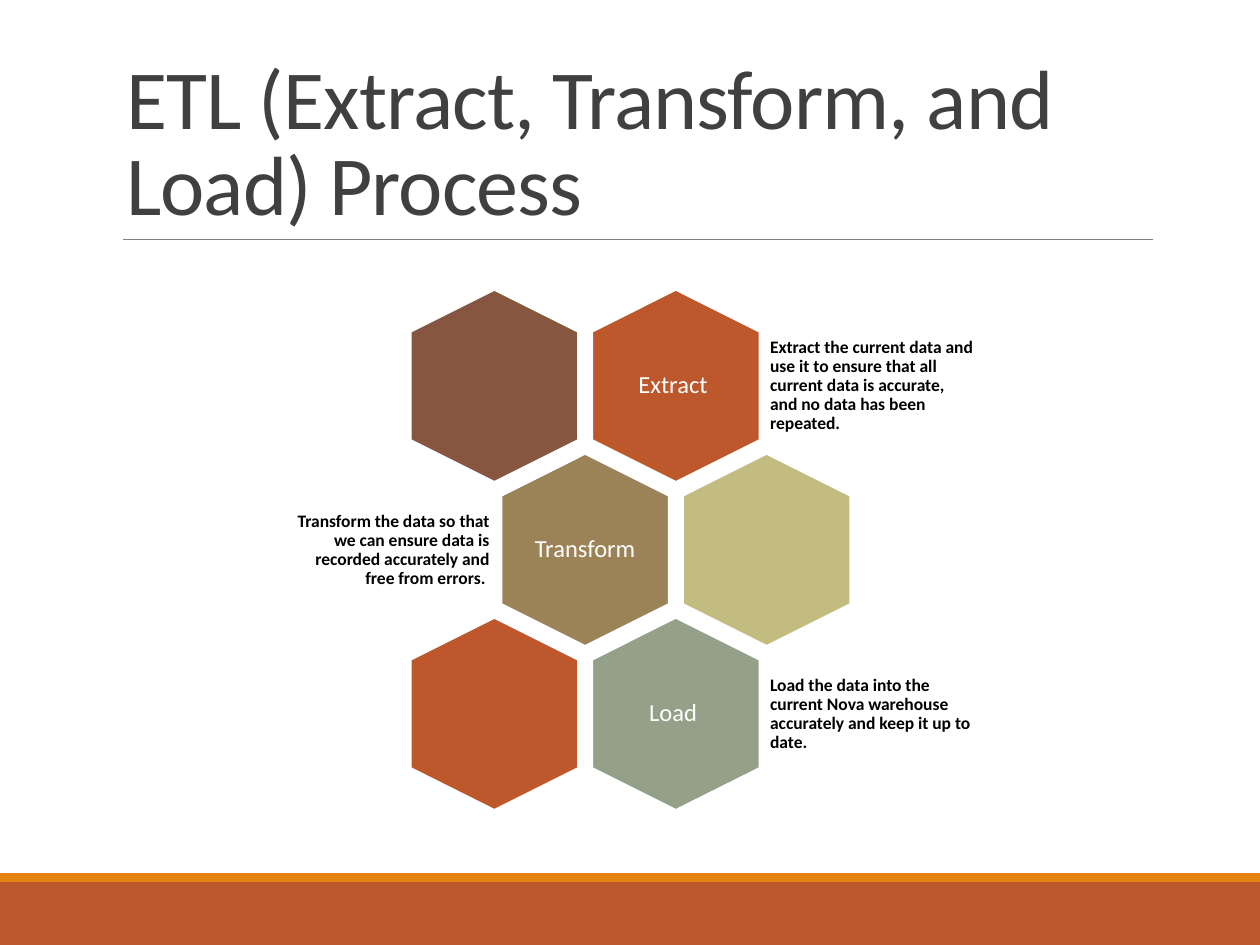
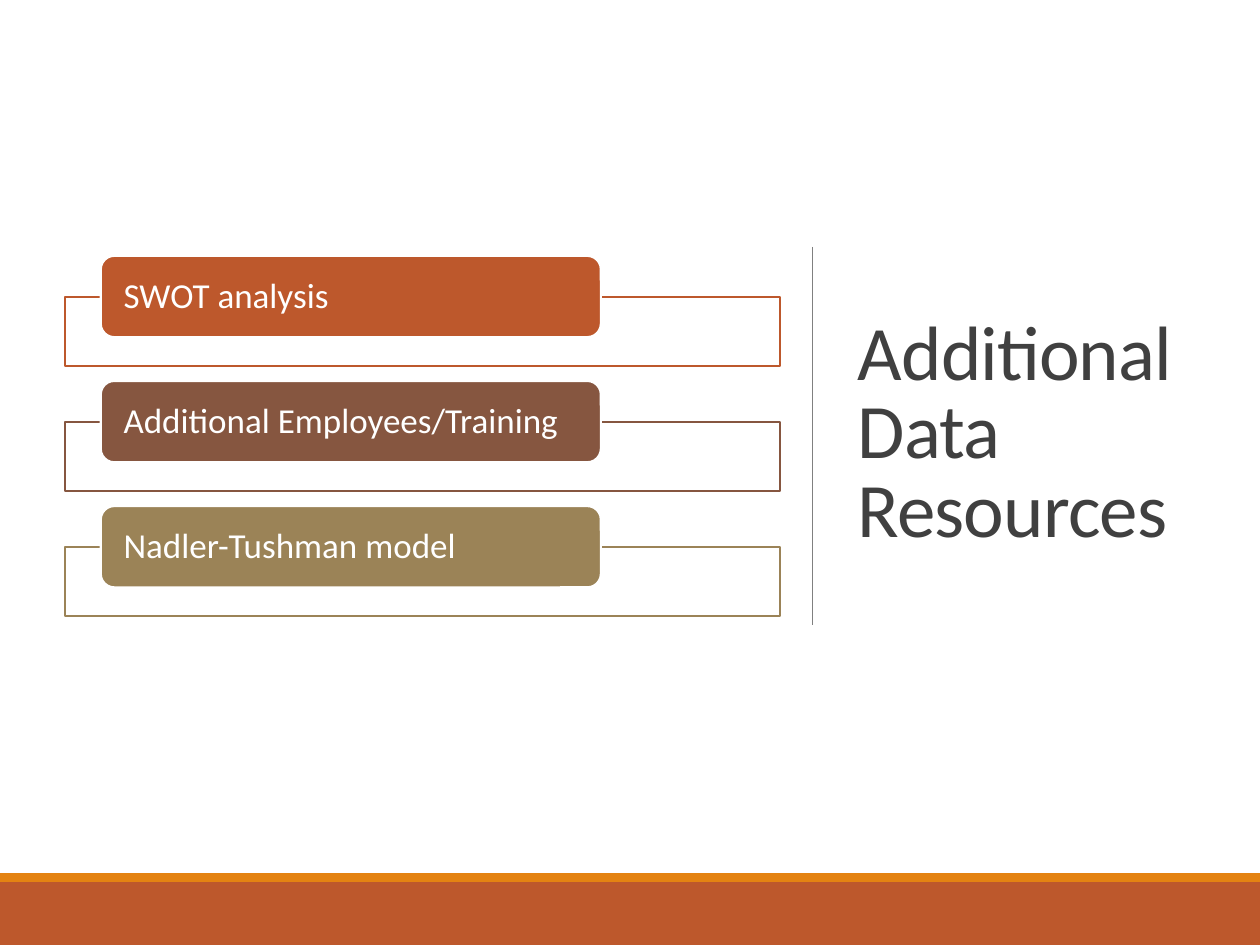
from lxml.etree import SubElement
from pptx import Presentation
from pptx.dml.color import RGBColor
from pptx.enum.shapes import MSO_CONNECTOR as Link, MSO_SHAPE as Form
from pptx.enum.text import MSO_ANCHOR as Anchor, PP_ALIGN as Align
from pptx.oxml.ns import qn
from pptx.util import Pt

hue = RGBColor.from_string
RUST, AMBER, BROWN, TAN = "BD582C", "E48312", "865640", "9B8357"
OLIVE, SAGE, WHITE, BLACK = "C2BC80", "94A088", "FFFFFF", "000000"
DARK, GREY = "404040", "808080"


def draw(slide, form, box, fill, line=None):
    """Add a filled shape with an optional 1.25 pt outline."""
    shape = slide.shapes.add_shape(form, *map(Pt, box))
    shape.shadow.inherit = False
    shape.fill.solid()
    shape.fill.fore_color.rgb = hue(fill)
    if line:
        shape.line.color.rgb = hue(line)
        shape.line.width = Pt(1.25)
    else:
        shape.line.fill.background()
    return shape


def write(slide, box, text, look):
    """Add a text box; look holds size, colour and what differs from plain."""
    frame = slide.shapes.add_textbox(*map(Pt, box)).text_frame
    frame.word_wrap = True
    frame.vertical_anchor = look.get("anchor", Anchor.MIDDLE)
    across, down = look.get("pad", (7.2, 3.6))
    pads = {"margin_left": across, "margin_right": across,
            "margin_top": down, "margin_bottom": down}
    for name, size in pads.items():
        setattr(frame, name, Pt(size))
    para = frame.paragraphs[0]
    para.alignment = look.get("align", Align.LEFT)
    para.line_spacing = look.get("lead", 0.9)
    run = para.add_run()
    run.text = text
    font = {"name": "Calibri", "size": Pt(look["size"]), "bold": look.get("bold", False)}
    for name, value in font.items():
        setattr(run.font, name, value)
    run.font.color.rgb = hue(look["color"])
    if "track" in look:
        run._r.get_or_add_rPr().set("spc", str(look["track"]))


deck = Presentation()
deck.slide_width, deck.slide_height = Pt(720), Pt(540)

# Bands, rule and title of each slide
head = {"color": DARK, "lead": 0.85, "track": -50}
pages = [
    ("ETL (Extract, Transform, and Load) Process", (65, 22, 594, 114.5),
     {**head, "size": 48, "anchor": Anchor.BOTTOM}, (70.4, 136.8, 658.8, 136.8)),
    ("Additional Data Resources", (483.1, 49.7, 199.4, 398.2),
     {**head, "size": 44}, (464, 141.1, 464, 357.1)),
]
for title, box, look, ends in pages:
    slide = deck.slides.add_slide(deck.slide_layouts[6])
    draw(slide, Form.RECTANGLE, (0, 504, 720, 36), RUST)
    draw(slide, Form.RECTANGLE, (0, 499, 720, 5), AMBER)
    rule = slide.shapes.add_connector(Link.STRAIGHT, *map(Pt, ends))
    rule.line.color.rgb = hue(GREY)
    rule.line.width = Pt(0.5)
    SubElement(rule._element.spPr, qn("a:effectLst"))
    write(slide, box, title, look)
etl, extra = deck.slides

# Honeycomb: the middle row is shifted by half a cell
label = {"size": 14, "color": WHITE, "align": Align.CENTER, "pad": (3, 4.3)}
note = {"size": 10, "color": BLACK, "bold": True, "pad": (2.9, 2.9)}
right = (437.2, 123, Align.LEFT)
left = (163, 119.5, Align.RIGHT)
rows = [
    ((BROWN, RUST), 1, "Extract ", right,
     "Extract the current data and use it to ensure that all current data is "
     "accurate, and no data has been repeated."),
    ((TAN, OLIVE), 0, "Transform", left,
     "Transform the data so that we can ensure data is recorded accurately "
     "and free from errors. "),
    ((RUST, SAGE), 1, "Load ", right,
     "Load the data into the current Nova warehouse accurately and keep it up to date."),
]
STEP = 103.7
for row, (fills, spot, step, side, text) in enumerate(rows):
    start = 227.5 + row % 2 * STEP / 2
    top = 172.6 + row * 93.7
    for col, fill in enumerate(fills):
        cell = draw(etl, Form.HEXAGON, (start + col * STEP, top, 110, 95.8), fill, WHITE)
        cell.rotation = 90
    write(etl, (start + spot * STEP + 21, top + 9.7, 68, 76), step, label)
    x, wide, align = side
    write(etl, (x, top + 15, wide, 66), text, {**note, "align": align})

# Resource list: a tab on top of each outlined bar
item = {"size": 20, "color": WHITE, "pad": (10.8, 0)}
tabs = [("SWOT analysis", RUST), ("Additional Employees/Training", BROWN),
        ("Nadler-Tushman model", TAN)]
for row, (text, fill) in enumerate(tabs):
    top = 146.2 + row * 71.5
    draw(extra, Form.RECTANGLE, (37.4, top + 23.5, 408.3, 39.5), WHITE, fill)
    draw(extra, Form.ROUNDED_RECTANGLE, (57.6, top, 285.8, 46.5), fill, WHITE)
    write(extra, (59.8, top + 2.5, 281, 42), text, item)

deck.save("out.pptx")
